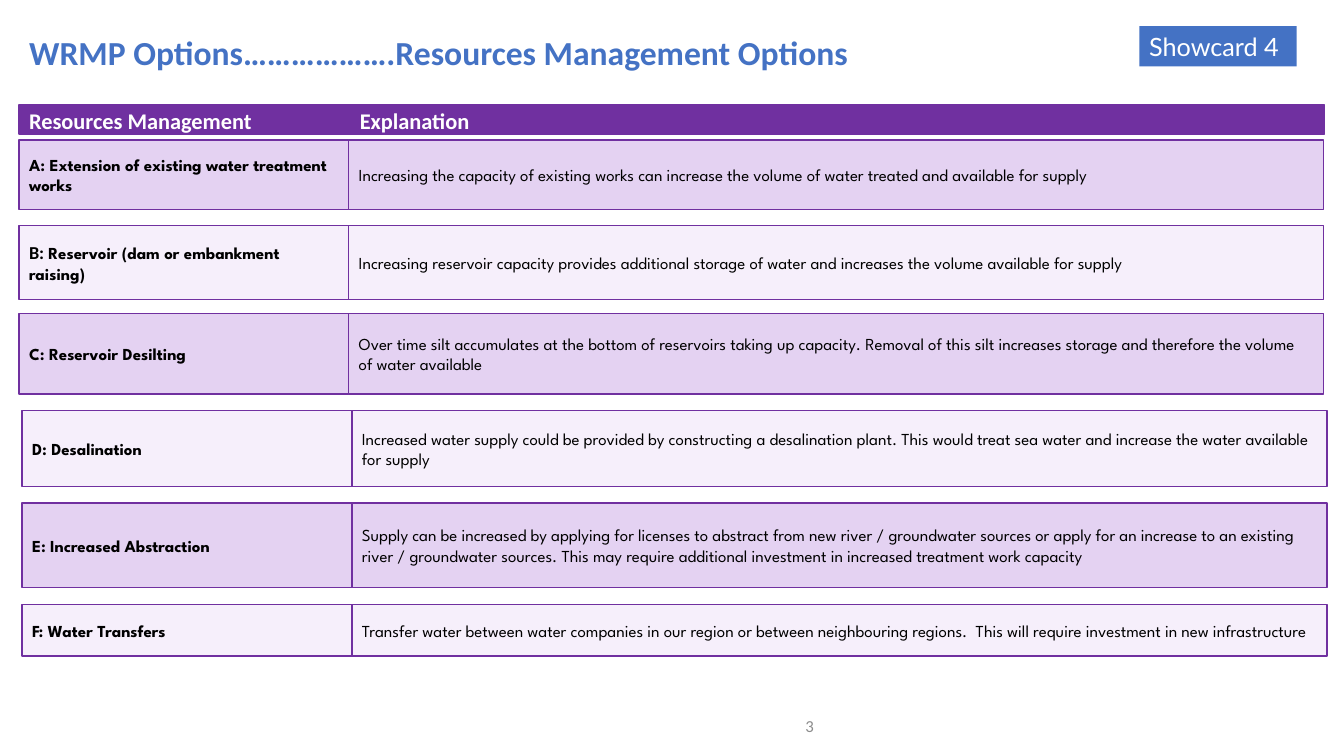
from pptx import Presentation
from pptx.dml.color import RGBColor
from pptx.enum.shapes import MSO_SHAPE
from pptx.enum.text import MSO_ANCHOR, MSO_AUTO_SIZE, PP_ALIGN
from pptx.util import Pt

RECTANGLE = MSO_SHAPE.RECTANGLE
TOP, MIDDLE = MSO_ANCHOR.TOP, MSO_ANCHOR.MIDDLE
LEFT, RIGHT = PP_ALIGN.LEFT, PP_ALIGN.RIGHT
FIT_SHAPE = MSO_AUTO_SIZE.SHAPE_TO_FIT_TEXT

EMU_PER_PX = 9144  # 100 px to the inch
SLIDE_WIDTH, SLIDE_HEIGHT = 1333, 750

BLUE, PURPLE, WHITE, BLACK, GREY = "4472C4", "7030A0", "FFFFFF", "000000", "8C8C8C"
ROW_FILLS = ("E4D2F2", "F6EFFB")
HEADING_FONT, CARD_FONT, BODY_FONT = "Calibri", "Lato", "League Spartan"

HEADER_TOP, HEADER_HEIGHT = 104, 29
OPTION_WIDTH, EXPLANATION_WIDTH = 327, 967

# left, top, height, lead in the heading font, option, explanation
OPTIONS = [
    (19, 139, 69, "", "A: Extension of existing water treatment works",
     "Increasing the capacity of existing works can increase the volume of water "
     "treated and available for supply"),
    (19, 224, 73, "B: ", "Reservoir (dam or embankment raising)",
     "Increasing reservoir capacity provides additional storage of water and "
     "increases the volume available for supply"),
    (19, 311, 80, "", "C: Reservoir Desilting",
     "Over time silt accumulates at the bottom of reservoirs taking up capacity. "
     "Removal of this silt increases storage and therefore the volume of water available"),
    (22, 407, 76, "", "D: Desalination",
     "Increased water supply could be provided by constructing a desalination plant. "
     "This would treat sea water and increase the water available for supply"),
    (22, 499, 84, "", "E: Increased Abstraction",
     "Supply can be increased by applying for licenses to abstract from new river / "
     "groundwater sources or apply for an increase to an existing river / groundwater "
     "sources. This may require additional investment in increased treatment work capacity"),
    (22, 600, 51, "", "F: Water Transfers",
     "Transfer water between water companies in our region or between neighbouring "
     "regions.  This will require investment in new infrastructure"),
]


def px(length):
    return length * EMU_PER_PX


def rgb(hex_colour):
    return RGBColor.from_string(hex_colour)


class Showcard:
    def __init__(self, presentation):
        presentation.slide_width = px(SLIDE_WIDTH)
        presentation.slide_height = px(SLIDE_HEIGHT)
        self.slide = presentation.slides.add_slide(presentation.slide_layouts[6])

    def set_text(self, shape, text, size, font, colour,
                 bold=False, align=LEFT, anchor=MIDDLE, lead=""):
        """Fill the shape with one paragraph; lead goes before it in the heading font."""
        frame = shape.text_frame
        frame.word_wrap = True
        frame.vertical_anchor = anchor
        paragraph = frame.paragraphs[0]
        paragraph.alignment = align
        if lead:
            lead_run = paragraph.add_run()
            lead_run.text = lead
            lead_run.font.name = HEADING_FONT
            lead_run.font.size = Pt(13)
        paragraph.add_run().text = text
        paragraph.font.size = Pt(size)
        paragraph.font.name = font
        paragraph.font.bold = bold
        paragraph.font.color.rgb = rgb(colour)
        return paragraph

    def label(self, box, text, size, colour, **style):
        textbox = self.slide.shapes.add_textbox(*map(px, box))
        return self.set_text(textbox, text, size, HEADING_FONT, colour, **style)

    def panel(self, box, fill, line=None):
        shape = self.slide.shapes.add_shape(RECTANGLE, *map(px, box))
        shape.shadow.inherit = False
        shape.fill.solid()
        shape.fill.fore_color.rgb = rgb(fill)
        if line:
            shape.line.color.rgb = rgb(line)
            shape.line.width = Pt(1)
        else:
            shape.line.fill.background()
        return shape

    def badge(self, box, text):
        badge = self.panel(box, BLUE)
        self.set_text(badge, text, 18, CARD_FONT, WHITE, anchor=TOP)
        badge.text_frame.auto_size = FIT_SHAPE

    def column_header(self, left, width, text):
        header = self.panel((left, HEADER_TOP, width, HEADER_HEIGHT), PURPLE, PURPLE)
        paragraph = self.set_text(header, text, 16, HEADING_FONT, WHITE, bold=True)
        paragraph.line_spacing = 1.07
        paragraph.space_after = Pt(8)

    def option_row(self, left, top, height, lead, option, explanation, fill):
        option_cell = self.panel((left, top, OPTION_WIDTH, height), fill, PURPLE)
        self.set_text(option_cell, option, 12, BODY_FONT, BLACK, bold=True, lead=lead)
        explanation_box = (left + OPTION_WIDTH, top, EXPLANATION_WIDTH, height)
        explanation_cell = self.panel(explanation_box, fill, PURPLE)
        self.set_text(explanation_cell, explanation, 12, BODY_FONT, BLACK)


def main():
    presentation = Presentation()
    card = Showcard(presentation)
    card.label((517, 700, 300, 40), "3", 12, GREY, align=RIGHT)
    title = card.label((19, 20, 1150, 69),
                       "WRMP Options……………….Resources Management Options",
                       24, BLUE, bold=True)
    title.line_spacing = 0.9
    card.badge((1130, 26, 156, 40), "Showcard 4")
    card.column_header(19, 354, "Resources Management")
    card.column_header(347, EXPLANATION_WIDTH, "Explanation")
    for index, option in enumerate(OPTIONS):
        card.option_row(*option, fill=ROW_FILLS[index % 2])
    presentation.save("out.pptx")


if __name__ == "__main__":
    main()
